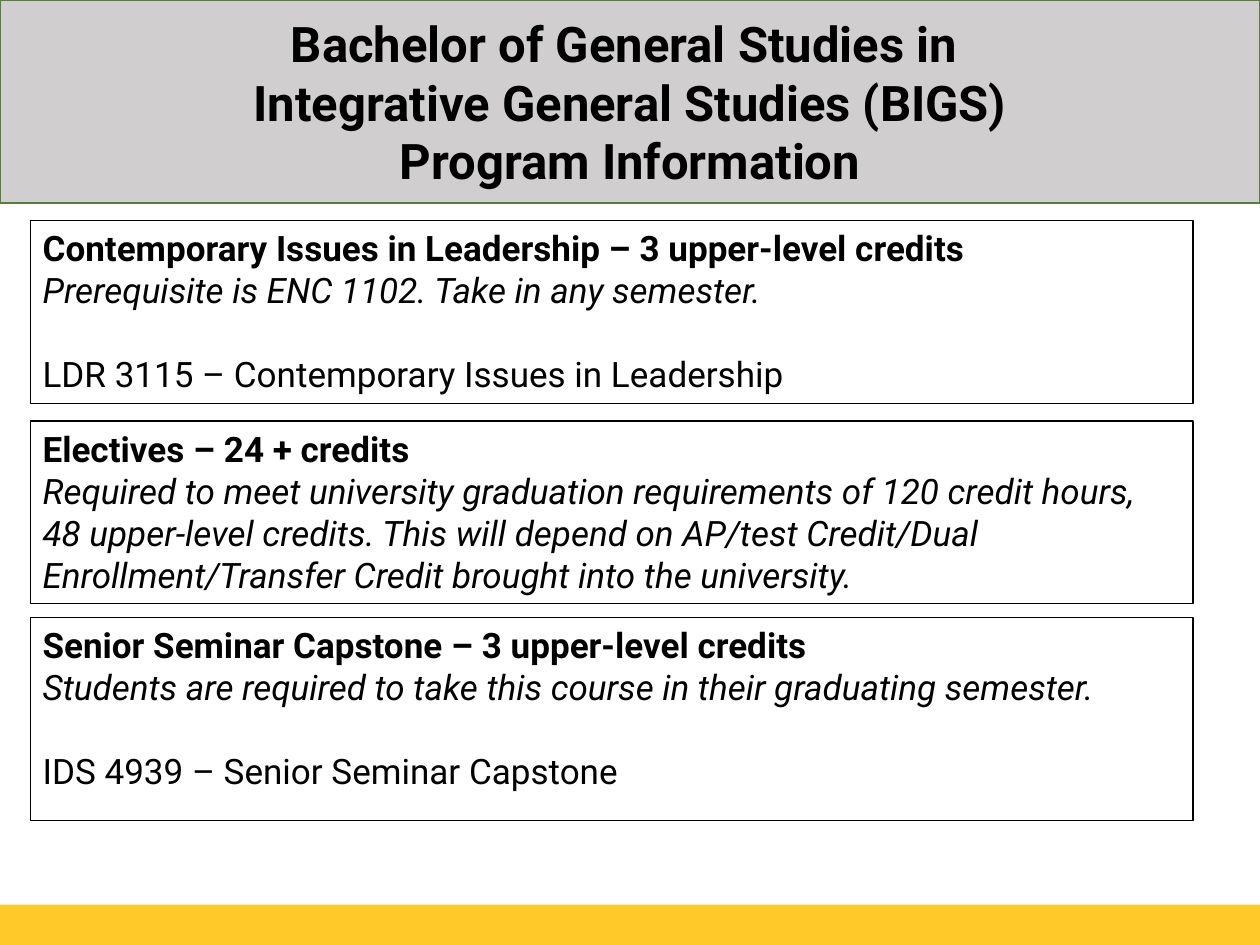
from pptx import Presentation
from pptx.dml.color import RGBColor
from pptx.enum.shapes import MSO_SHAPE
from pptx.enum.text import MSO_ANCHOR, PP_ALIGN
from pptx.util import Inches, Pt

BLACK = RGBColor(0x00, 0x00, 0x00)
GRAY = RGBColor(0xD0, 0xCE, 0xCE)
GREEN = RGBColor(0x53, 0x80, 0x35)
GOLD = RGBColor(0xFF, 0xCA, 0x29)
FONT = "Roboto"

TITLE = [
    "Bachelor of General Studies in ",
    "Integrative General Studies (BIGS)",
    "Program Information",
]

# top, height, heading, note, course
REQUIREMENTS = [
    (1.75, 1.45, "Contemporary Issues in Leadership – 3 upper-level credits",
     "Prerequisite is ENC 1102. Take in any semester.",
     "LDR 3115 – Contemporary Issues in Leadership"),
    (3.34, 1.45, "Electives – 24 + credits",
     "Required to meet university graduation requirements of 120 credit hours, "
     "48 upper-level credits. This will depend on AP/test Credit/Dual "
     "Enrollment/Transfer Credit brought into the university.",
     None),
    (4.9, 1.61, "Senior Seminar Capstone – 3 upper-level credits",
     "Students are required to take this course in their graduating semester.",
     "IDS 4939 – Senior Seminar Capstone"),
]


def add_panel(page, left, top, width, height, fill=None, line=None, line_width=0.75):
    panel = page.shapes.add_shape(
        MSO_SHAPE.RECTANGLE, Inches(left), Inches(top), Inches(width), Inches(height))
    panel.shadow.inherit = False
    if fill is None:
        panel.fill.background()
    else:
        panel.fill.solid()
        panel.fill.fore_color.rgb = fill
    if line is None:
        panel.line.fill.background()
    else:
        panel.line.color.rgb = line
        panel.line.width = Pt(line_width)
    return panel


def write_lines(panel, lines, size, align, anchor):
    """Fill a panel with (text, bold, italic, space before) paragraphs."""
    frame = panel.text_frame
    frame.word_wrap = True
    frame.vertical_anchor = anchor
    for index, (text, bold, italic, space_before) in enumerate(lines):
        para = frame.add_paragraph() if index else frame.paragraphs[0]
        para.alignment = align
        para.space_before = Pt(space_before)
        span = para.add_run()
        span.text = text
        span.font.name = FONT
        span.font.size = Pt(size)
        span.font.bold = bold
        span.font.italic = italic
        span.font.color.rgb = BLACK


deck = Presentation()
deck.slide_width = Inches(10)
deck.slide_height = Inches(7.5)
page = deck.slides.add_slide(deck.slide_layouts[6])

add_panel(page, 0, 7.18, 10, 0.32, fill=GOLD)

for top, height, heading, note, course in REQUIREMENTS:
    lines = [(heading, True, False, 0), (note, False, True, 0)]
    if course:
        lines.append((course, False, False, 24))
    box = add_panel(page, 0.24, top, 9.23, height, line=BLACK)
    write_lines(box, lines, 20, PP_ALIGN.LEFT, MSO_ANCHOR.TOP)

banner = add_panel(page, 0, 0, 10, 1.61, fill=GRAY, line=GREEN, line_width=1)
write_lines(banner, [(text, True, False, 0) for text in TITLE],
            28, PP_ALIGN.CENTER, MSO_ANCHOR.MIDDLE)

deck.save("out.pptx")
